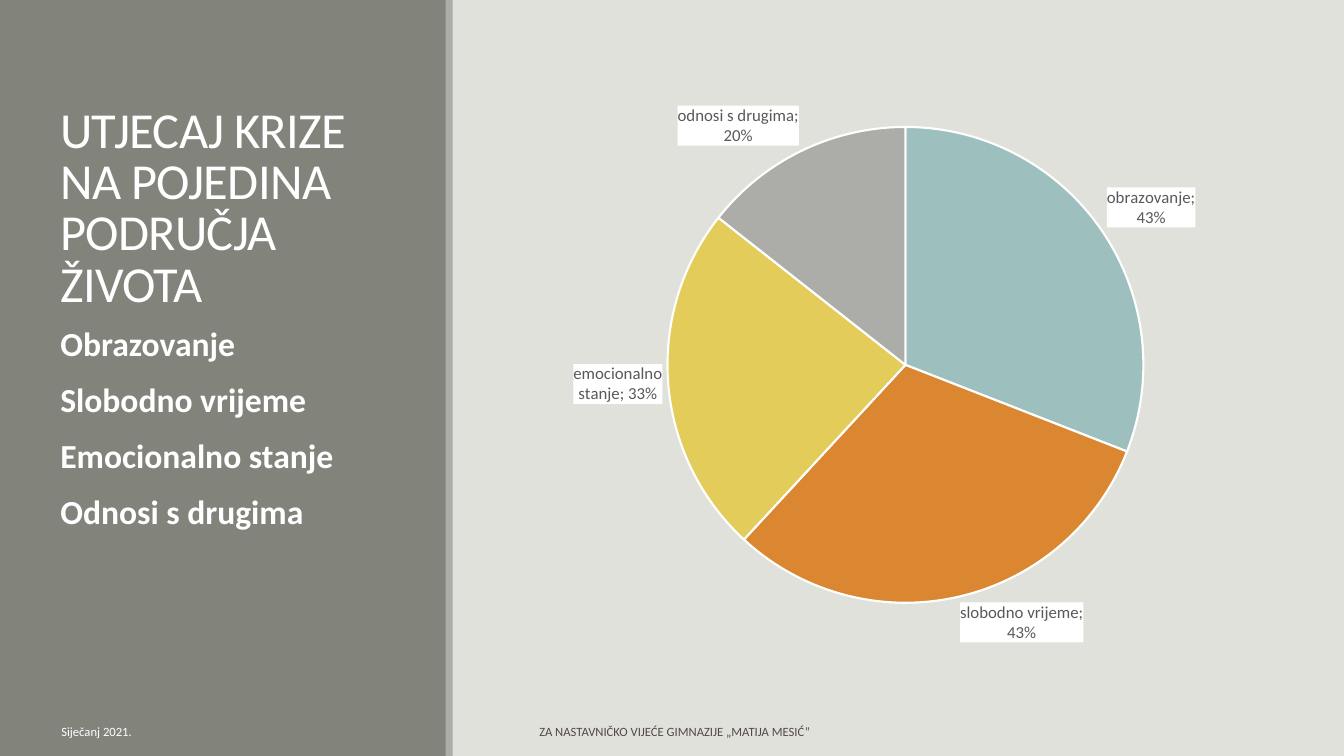
from dataclasses import dataclass

from lxml import etree
from pptx import Presentation
from pptx.chart.data import CategoryChartData
from pptx.dml.color import RGBColor
from pptx.enum import chart as ch, shapes, text
from pptx.oxml import parse_xml
from pptx.oxml.ns import nsdecls, qn
from pptx.util import Inches, Pt

FONT = "Calibri"
WHITE = "FFFFFF"
BACKGROUND = "E1E1DB"


@dataclass(frozen=True)
class Box:
    left: float
    top: float
    width: float
    height: float

    def emu(self) -> tuple:
        return tuple(Inches(v) for v in (self.left, self.top, self.width, self.height))


@dataclass(frozen=True)
class Band:
    box: Box
    color: str


@dataclass(frozen=True)
class Caption:
    box: Box
    lines: tuple[str, ...]
    size: float
    color: str = WHITE
    anchor: text.MSO_ANCHOR = text.MSO_ANCHOR.MIDDLE
    bold: bool = False
    line_spacing: float = 1.0
    before: float = 0
    after: float = 0
    tracking: float = 0


@dataclass(frozen=True)
class LifeArea:
    name: str
    share: float
    color: str


BANDS = (
    Band(Box(0, 0, 4.43, 7.5), "82847C"),
    Band(Box(4.42, 0, 0.07, 7.5), "ACADA8"),
)
AREAS = (
    LifeArea("obrazovanje", 0.43, "9DBFBE"),
    LifeArea("slobodno vrijeme", 0.43, "DB8631"),
    LifeArea("emocionalno stanje", 0.33, "E3CC5A"),
    LifeArea("odnosi s drugima", 0.2, "ACADA8"),
)
CAPTIONS = (
    Caption(Box(0.5, 0.65, 3.5, 2.5), ("UTJECAJ KRIZE NA POJEDINA PODRUČJA ŽIVOTA",), 36,
            anchor=text.MSO_ANCHOR.BOTTOM, line_spacing=0.85, tracking=-0.5),
    Caption(Box(0.5, 3.2, 3.5, 3.7), tuple(area.name.capitalize() for area in AREAS), 24,
            anchor=text.MSO_ANCHOR.TOP, bold=True, line_spacing=0.9, before=12, after=2),
    Caption(Box(0.51, 7.06, 2.86, 0.4), ("Siječanj 2021.",), 9),
    Caption(Box(5.25, 7.06, 5.08, 0.4),
            ("ZA NASTAVNIČKO VIJEĆE GIMNAZIJE „MATIJA MESIĆ”",), 9, "514949"),
)
CHART_BOX = Box(5.25, 0.8, 7.1, 5.75)
PIE_BOX = Box(6.62, 1.26, 4.72, 4.72)


def rgb(color: str) -> RGBColor:
    return RGBColor.from_string(color)


def add_band(slide, band: Band) -> None:
    shape = slide.shapes.add_shape(shapes.MSO_SHAPE.RECTANGLE, *band.box.emu())
    shape.shadow.inherit = False
    shape.fill.solid()
    shape.fill.fore_color.rgb = rgb(band.color)
    shape.line.fill.background()


def add_caption(slide, caption: Caption) -> None:
    frame = slide.shapes.add_textbox(*caption.box.emu()).text_frame
    frame.word_wrap = True
    frame.vertical_anchor = caption.anchor
    frame.text = "\n".join(caption.lines)
    for paragraph in frame.paragraphs:
        paragraph.line_spacing = caption.line_spacing
        paragraph.space_before = Pt(caption.before)
        paragraph.space_after = Pt(caption.after)
        for run in paragraph.runs:
            run.font.name = FONT
            run.font.size = Pt(caption.size)
            run.font.bold = caption.bold
            run.font.color.rgb = rgb(caption.color)
            if caption.tracking:
                run.font._element.set("spc", str(round(caption.tracking * 100)))


def place_pie(chart) -> None:
    """Fix the pie at PIE_BOX, as fractions of the chart frame."""
    fractions = {
        "x": (PIE_BOX.left - CHART_BOX.left) / CHART_BOX.width,
        "y": (PIE_BOX.top - CHART_BOX.top) / CHART_BOX.height,
        "w": PIE_BOX.width / CHART_BOX.width,
        "h": PIE_BOX.height / CHART_BOX.height,
    }
    plot_area = chart._chartSpace.chart.plotArea
    for layout in plot_area.findall(qn("c:layout")):
        plot_area.remove(layout)
    settings = '<c:layoutTarget val="inner"/><c:xMode val="edge"/><c:yMode val="edge"/>'
    settings += "".join(f'<c:{k} val="{v:.3f}"/>' for k, v in fractions.items())
    plot_area.insert(0, parse_xml(
        f'<c:layout {nsdecls("c")}><c:manualLayout>{settings}</c:manualLayout></c:layout>'))


def format_labels(plot) -> None:
    plot.has_data_labels = True
    labels = plot.data_labels
    labels.show_value = labels.show_category_name = True
    labels.show_percentage = False
    labels.number_format = "0%"
    labels.number_format_is_linked = False
    labels.position = ch.XL_LABEL_POSITION.OUTSIDE_END
    labels.font.name = FONT
    labels.font.size = Pt(12)
    labels.font.color.rgb = rgb("595959")
    element = labels._element
    element.find(qn("c:txPr")).addprevious(parse_xml(
        f'<c:spPr {nsdecls("c", "a")}><a:solidFill><a:srgbClr val="{WHITE}"/>'
        '</a:solidFill><a:ln><a:noFill/></a:ln></c:spPr>'))
    separator = etree.Element(qn("c:separator"))
    separator.text = "; "
    flags = [child for child in element if child.tag in
             (qn("c:showPercent"), qn("c:showBubbleSize"))]
    flags[-1].addnext(separator)


def add_impact_pie(slide) -> None:
    impact = CategoryChartData(number_format="0%")
    impact.categories = [area.name for area in AREAS]
    impact.add_series("Series 1", [area.share for area in AREAS])
    chart = slide.shapes.add_chart(ch.XL_CHART_TYPE.PIE, *CHART_BOX.emu(), impact).chart
    chart.has_legend = False
    chart.has_title = False
    chart.font.name = FONT
    chart.font.size = Pt(10)
    chart.font.color.rgb = rgb("000000")
    plot = chart.plots[0]
    plot.vary_by_categories = True
    for index, area in enumerate(AREAS):
        slice_format = plot.series[0].points[index].format
        slice_format.fill.solid()
        slice_format.fill.fore_color.rgb = rgb(area.color)
        slice_format.line.color.rgb = rgb(WHITE)
        slice_format.line.width = Pt(1.5)
    format_labels(plot)
    place_pie(chart)


def main() -> None:
    deck = Presentation()
    deck.slide_width, deck.slide_height = Inches(13.33), Inches(7.5)
    slide = deck.slides.add_slide(deck.slide_layouts[6])
    slide.background.fill.solid()
    slide.background.fill.fore_color.rgb = rgb(BACKGROUND)
    for band in BANDS:
        add_band(slide, band)
    add_impact_pie(slide)
    for caption in CAPTIONS:
        add_caption(slide, caption)
    deck.save("out.pptx")


if __name__ == "__main__":
    main()
